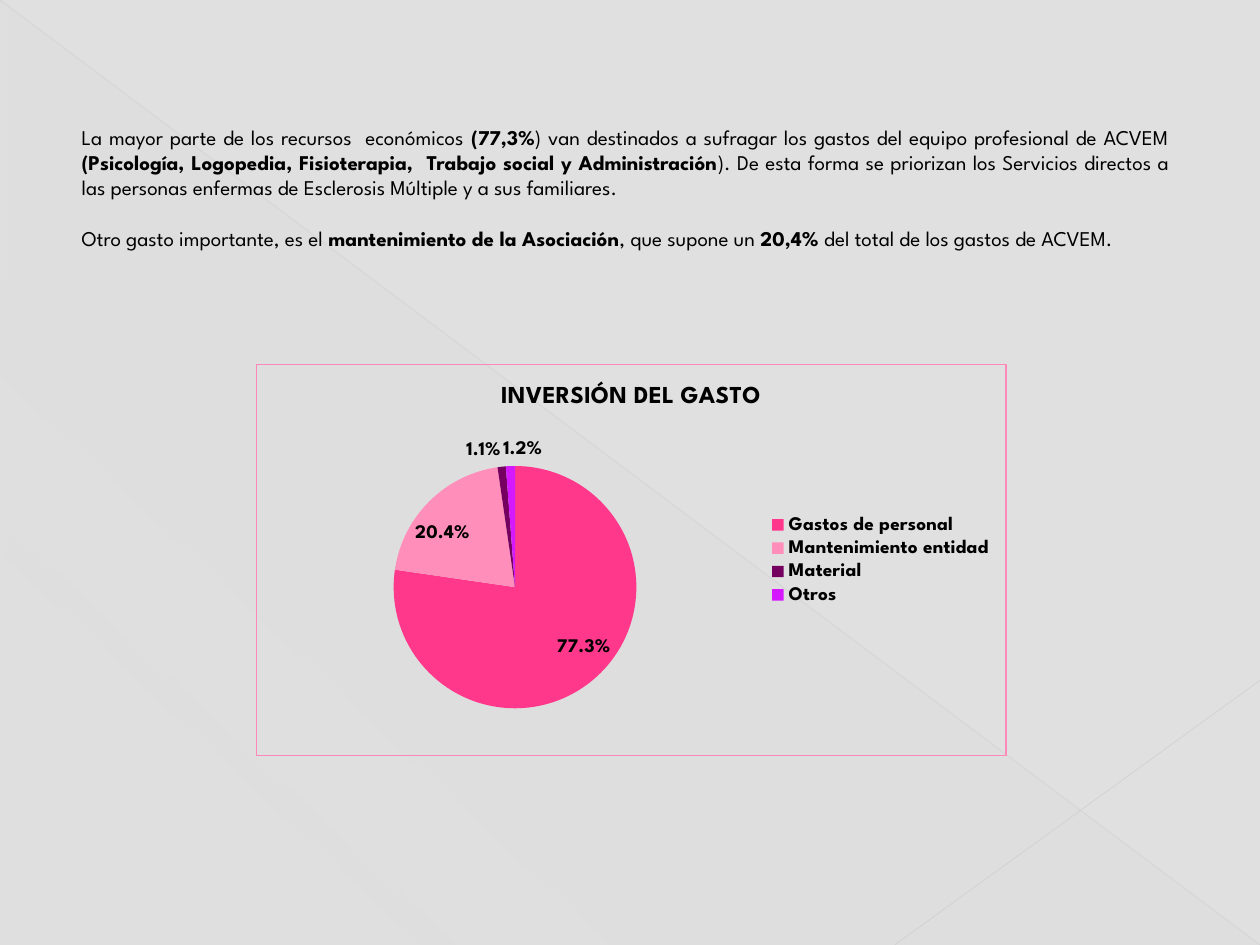
from lxml.etree import SubElement
from pptx import Presentation
from pptx.chart.data import CategoryChartData
from pptx.dml.color import RGBColor
from pptx.enum.chart import XL_CHART_TYPE, XL_LABEL_POSITION, XL_LEGEND_POSITION
from pptx.enum.shapes import MSO_CONNECTOR, MSO_SHAPE
from pptx.enum.text import MSO_AUTO_SIZE, PP_ALIGN
from pptx.oxml import parse_xml
from pptx.oxml.ns import nsdecls, qn
from pptx.util import Inches, Pt

FONT = "League Spartan"
COLORS = {
    "background": "E0E0E0", "shade": "D2D2D2", "diagonal": "BFBFBF",
    "corner": "C6C6C6", "text": "000000", "border": "FF88BA",
}
SPENDING = [  # category, percentage, slice colour
    ("Gastos de personal", 77.3, "FF388C"),
    ("Mantenimiento entidad", 20.4, "FF8EBA"),
    ("Material", 1.1, "75005F"),
    ("Otros", 1.2, "D519FF"),
]
PARAGRAPHS = [  # runs of (text, bold)
    [("La mayor parte de los recursos  económicos ", False),
     ("(77,3%", True),
     (") van destinados a sufragar los gastos del equipo profesional de ACVEM ", False),
     ("(Psicología, Logopedia, Fisioterapia,  Trabajo social y Administración", True),
     ("). De esta forma se priorizan los Servicios directos a las personas "
      "enfermas de Esclerosis Múltiple y a sus familiares.", False)],
    [("Otro gasto importante, es el ", False),
     ("mantenimiento de la Asociación", True),
     (", que supone un ", False),
     ("20,4% ", True),
     ("del total de los gastos de ACVEM.", False)],
]


def rgb(name):
    return RGBColor.from_string(COLORS.get(name, name))


def style(font, size, bold):
    font.name, font.size, font.bold = FONT, Pt(size), bold
    font.color.rgb = rgb("text")


def add_faint_line(slide, start, end, color, width, opacity):
    line = slide.shapes.add_connector(
        MSO_CONNECTOR.STRAIGHT, *(Inches(v) for v in start + end))
    line.line.color.rgb = rgb(color)
    line.line.width = Pt(width)
    properties = line.element.spPr
    tint = next(properties.iter(qn("a:srgbClr")))
    SubElement(tint, qn("a:alpha"), val=str(opacity * 1000))
    SubElement(properties, qn("a:effectLst"))


def add_backdrop(slide, width, height):
    slide.background.fill.solid()
    slide.background.fill.fore_color.rgb = rgb("background")

    # Shaded lower-left triangle
    triangle = slide.shapes.add_shape(
        MSO_SHAPE.RIGHT_TRIANGLE, 0, 0, Inches(width), Inches(height))
    triangle.shadow.inherit = False
    triangle.line.fill.background()
    stops = "".join(
        f'<a:gs pos="{pos * 1000}"><a:srgbClr val="{COLORS["shade"]}">'
        f'<a:alpha val="{opacity * 1000}"/></a:srgbClr></a:gs>'
        for pos, opacity in [(0, 10), (70, 8), (100, 1)])
    triangle.element.spPr.find(qn("a:prstGeom")).addnext(parse_xml(
        f'<a:gradFill {nsdecls("a")}><a:gsLst>{stops}</a:gsLst>'
        f'<a:lin ang="{133 * 60000}" scaled="0"/></a:gradFill>'))

    # Crossing lines
    add_faint_line(slide, (0, 0), (width, height), "diagonal", 0.39, 35)
    add_faint_line(slide, (width, height * 0.72), (width * 0.71, height),
                   "corner", 0.47, 45)


def add_summary(slide, left, top, width, height):
    summary = slide.shapes.add_textbox(
        *(Inches(v) for v in (left, top, width, height))).text_frame
    summary.word_wrap = True
    summary.auto_size = MSO_AUTO_SIZE.SHAPE_TO_FIT_TEXT
    for index, runs in enumerate(PARAGRAPHS):
        paragraph = summary.add_paragraph() if index else summary.paragraphs[0]
        paragraph.alignment = PP_ALIGN.JUSTIFY
        if index:
            paragraph.space_before = Pt(14.4)
        for text, bold in runs:
            run = paragraph.add_run()
            run.text = text
            style(run.font, 12, bold)


def add_spending_chart(slide, left, top, width, height):
    data = CategoryChartData()
    data.categories = [category for category, _, _ in SPENDING]
    data.add_series("Series 1", [value for _, value, _ in SPENDING])
    chart = slide.shapes.add_chart(
        XL_CHART_TYPE.PIE,
        *(Inches(v) for v in (left, top, width, height)), data).chart
    style(chart.font, 18, False)

    # Title and legend
    chart.has_title = True
    title = chart.chart_title.text_frame.paragraphs[0].add_run()
    title.text = "INVERSIÓN DEL GASTO"
    style(title.font, 14, True)
    chart.chart_title.include_in_layout = False
    chart.has_legend = True
    chart.legend.position = XL_LEGEND_POSITION.RIGHT
    chart.legend.include_in_layout = False
    style(chart.legend.font, 11, True)

    # Slices and percentages
    pie = chart.plots[0]
    pie.vary_by_categories = True
    for index, (_, _, color) in enumerate(SPENDING):
        piece = pie.series[0].points[index].format
        piece.fill.solid()
        piece.fill.fore_color.rgb = rgb(color)
        piece.line.fill.background()
    labels = pie.series[0].data_labels
    style(labels.font, 11, True)
    labels.number_format, labels.number_format_is_linked = "0.0%", False
    labels.show_percentage, labels.show_value = True, False
    labels.position = XL_LABEL_POSITION.BEST_FIT

    # Plot position and frame
    plot_area = chart.element.chart.plotArea
    for old in plot_area.findall(qn("c:layout")):
        plot_area.remove(old)
    shares = {"x": 0.08, "y": 0.26, "w": 0.53, "h": 0.62}
    plot_area.insert(0, parse_xml(
        f'<c:layout {nsdecls("c")}><c:manualLayout><c:layoutTarget val="inner"/>'
        '<c:xMode val="edge"/><c:yMode val="edge"/>'
        + "".join(f'<c:{key} val="{share}"/>' for key, share in shares.items())
        + '</c:manualLayout></c:layout>'))
    chart.element.chart.addnext(parse_xml(
        f'<c:spPr {nsdecls("c", "a")}><a:noFill/><a:ln w="{Pt(0.75)}"><a:solidFill>'
        f'<a:srgbClr val="{COLORS["border"]}"/></a:solidFill></a:ln></c:spPr>'))


def main():
    width, height = 10, 7.5
    deck = Presentation()
    deck.slide_width, deck.slide_height = Inches(width), Inches(height)
    slide = deck.slides.add_slide(deck.slide_layouts[6])
    add_backdrop(slide, width, height)
    add_spending_chart(slide, width * 0.203, height * 0.385, width * 0.596, height * 0.415)
    add_summary(slide, width * 0.055, height * 0.125, width * 0.883, height * 0.175)
    deck.save("out.pptx")


if __name__ == "__main__":
    main()
